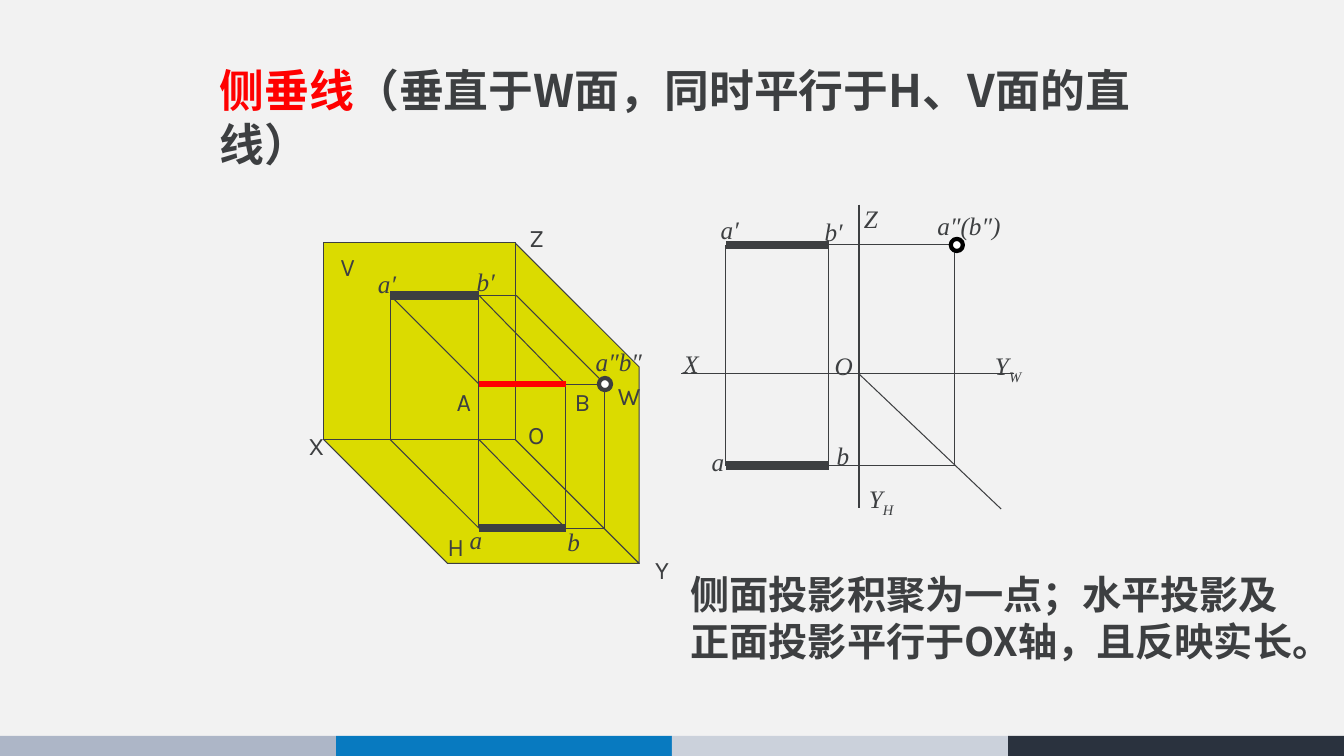
from dataclasses import dataclass
from lxml import etree
from pptx import Presentation
from pptx import util as u
from pptx.dml.color import RGBColor
from pptx.enum import shapes, text
from pptx.oxml.ns import qn


@dataclass(frozen=True)
class Theme:
    paper: str = "F2F2F2"
    ink: str = "3D3F41"
    red: str = "FF0000"
    plane: str = "DBDB00"
    white: str = "FFFFFF"
    black: str = "000000"
    sans: str = "Karla"
    chinese: str = "Noto Sans CJK SC"
    serif: str = "Times New Roman"
    title: int = 32
    body: int = 28
    label: int = 18
    thin: float = 0.75
    ring: float = 3
    true_length: float = 4.5
    projection: float = 6


THEME = Theme()
WIDTH, HEIGHT = 13.33, 7.5
FOOTER_TOP = 7.3
FOOTER = ["ADB6C7", "087AC0", "CBD1DB", "2A323E"]

TITLE = [("侧垂线", THEME.red, THEME.sans),
         ("（垂直于W面，同时平行于H、V面的直线）", THEME.ink, THEME.chinese)]
CONCLUSION = [("侧面投影积聚为一点；水平投影及正面投影平行于OX轴，且反映实长。",
               THEME.ink, THEME.chinese)]
PARAGRAPHS = [(TITLE, THEME.title, (2.08, 0.53, 9.68, 0.64)),
              (CONCLUSION, THEME.body, (6.75, 5.57, 6.32, 1.04))]

PLANE_LEFT, PLANE_TOP, PLANE_WIDTH, PLANE_HEIGHT, DEPTH = 3.21, 2.41, 1.9, 1.95, 1.23

SPACE_POINTS = {
    "a'": (3.87, 2.93), "b'": (4.75, 2.93), "z": (5.12, 2.93),
    "A": (4.75, 3.81), "B": (5.61, 3.81), "w": (6, 3.81),
    "ax": (3.87, 4.36), "bx": (4.75, 4.36),
    "a": (4.75, 5.24), "b": (5.61, 5.24), "y": (6, 5.24),
}
SPACE_LINES = ["A a", "b' z", "B w", "y a", "w y", "a' ax", "a ax", "A a'",
               "z w", "B b", "B b'", "b' bx", "b bx"]

FLAT_POINTS = {
    "a'": (7.2, 2.43), "b'": (8.22, 2.43), "a''": (9.47, 2.43),
    "a": (7.2, 4.62), "b": (8.22, 4.62), "y": (9.47, 4.62),
    "X": (6.75, 3.71), "O": (8.52, 3.71), "Yw": (10.06, 3.71),
    "Z": (8.52, 2.03), "Yh": (8.52, 5.04), "bisector": (9.93, 5.05),
}
FLAT_LINES = ["Yw X", "O bisector", "b y", "y a''", "b b'", "a a'", "b' a''", "Z Yh"]

RINGS = [(SPACE_POINTS["w"], THEME.ink), ((9.49, 2.43), THEME.black)]
RING_SIZE = 0.12

LABEL_HEIGHT = 0.4
PLANE_LABEL_WIDTH = 0.44
PLANE_LABELS = [("V", 3.28, 2.44), ("W", 6.03, 3.72), ("X", 2.96, 4.22),
                ("Y", 6.4, 5.45), ("Z", 5.15, 2.16), ("O", 5.14, 4.11),
                ("A", 4.43, 3.78), ("B", 5.6, 3.78), ("H", 4.34, 5.22)]
POINT_LABELS = [("b", "", 5.53, 5.17, 0.38), ("a′", "", 3.65, 2.61, 0.75),
                ("a″b″", "", 5.81, 3.39, 1.12), ("a", "", 4.56, 5.15, 0.25),
                ("b′", "", 4.63, 2.59, 0.75), ("Y", "W", 9.77, 3.43, 0.51),
                ("Z", "", 8.47, 1.97, 0.33), ("X", "", 6.68, 3.41, 0.35),
                ("a″(b″)", "", 9.2, 2.04, 0.87), ("b′", "", 8.08, 2.1, 0.81),
                ("a", "", 6.96, 4.38, 0.45), ("O", "", 8.18, 3.43, 0.35),
                ("Y", "H", 8.52, 4.75, 0.47), ("a′", "", 7.05, 2.08, 0.74),
                ("b", "", 8.2, 4.32, 0.43)]


def inches(values):
    return [u.Inches(value) for value in values]


def draw_shape(slide, kind, box, fill, line=None, weight=THEME.thin):
    shape = slide.shapes.add_shape(kind, *inches(box))
    shape.shadow.inherit = False
    shape.fill.solid()
    shape.fill.fore_color.rgb = RGBColor.from_string(fill)
    if line:
        shape.line.color.rgb = RGBColor.from_string(line)
        shape.line.width = u.Pt(weight)
    else:
        shape.line.fill.background()
    return shape


def draw_line(slide, points, pair, weight=THEME.thin, color=THEME.ink):
    start, end = (points[name] for name in pair.split())
    connector = slide.shapes.add_connector(
        shapes.MSO_CONNECTOR.STRAIGHT, *inches(start + end))
    connector.line.color.rgb = RGBColor.from_string(color)
    connector.line.width = u.Pt(weight)
    etree.SubElement(connector.element.spPr, qn("a:effectLst"))


def add_text(slide, box, runs, size, **formats):
    frame = slide.shapes.add_textbox(*inches(box)).text_frame
    frame.word_wrap = True
    frame.auto_size = text.MSO_AUTO_SIZE.SHAPE_TO_FIT_TEXT
    paragraph = frame.paragraphs[0]
    for words, color, face in runs:
        run = paragraph.add_run()
        run.text = words
        values = {"name": face, "size": u.Pt(size), **formats}
        for name, value in values.items():
            setattr(run.font, name, value)
        run.font.color.rgb = RGBColor.from_string(color)
        east_asian = etree.SubElement(run.font._element, qn("a:ea"))
        east_asian.set("typeface", THEME.chinese)
    return frame


def draw_planes(slide):
    kinds = shapes.MSO_SHAPE
    right, bottom = PLANE_LEFT + PLANE_WIDTH, PLANE_TOP + PLANE_HEIGHT
    side_length = PLANE_HEIGHT + DEPTH
    side_box = (right + (DEPTH - side_length) / 2,
                PLANE_TOP + (side_length - DEPTH) / 2, side_length, DEPTH)
    floor_box = (PLANE_LEFT, bottom, PLANE_WIDTH + DEPTH, DEPTH)
    front_box = (PLANE_LEFT, PLANE_TOP, PLANE_WIDTH, PLANE_HEIGHT)
    side = draw_shape(slide, kinds.PARALLELOGRAM, side_box, THEME.plane, THEME.ink)
    side.rotation = 270
    floor = draw_shape(slide, kinds.PARALLELOGRAM, floor_box, THEME.plane, THEME.ink)
    floor.element.spPr.find(qn("a:xfrm")).set("flipH", "1")
    for shape in (side, floor):
        shape.adjustments[0] = 1
    draw_shape(slide, kinds.RECTANGLE, front_box, THEME.plane, THEME.ink)


def draw_views(slide):
    for points, pairs in ((SPACE_POINTS, SPACE_LINES), (FLAT_POINTS, FLAT_LINES)):
        for pair in pairs:
            draw_line(slide, points, pair)
        for pair in ("a' b'", "a b"):
            draw_line(slide, points, pair, THEME.projection)
    draw_line(slide, SPACE_POINTS, "A B", THEME.true_length, THEME.red)
    for (x, y), color in RINGS:
        box = (x - RING_SIZE / 2, y - RING_SIZE / 2, RING_SIZE, RING_SIZE)
        draw_shape(slide, shapes.MSO_SHAPE.OVAL, box, THEME.white, color, THEME.ring)


def add_labels(slide):
    for word, left, top in PLANE_LABELS:
        add_text(slide, (left, top, PLANE_LABEL_WIDTH, LABEL_HEIGHT),
                 [(word, THEME.ink, THEME.sans)], THEME.label)
    for word, subscript, left, top, width in POINT_LABELS:
        runs = [(part, THEME.ink, THEME.serif) for part in (word, subscript) if part]
        frame = add_text(slide, (left, top, width, LABEL_HEIGHT), runs,
                         THEME.label, italic=True)
        for run in frame.paragraphs[0].runs[1:]:
            run.font._element.set("baseline", "-25000")


def main():
    presentation = Presentation()
    presentation.slide_width, presentation.slide_height = inches((WIDTH, HEIGHT))
    slide = presentation.slides.add_slide(presentation.slide_layouts[6])
    slide.background.fill.solid()
    slide.background.fill.fore_color.rgb = RGBColor.from_string(THEME.paper)
    band = WIDTH / len(FOOTER)
    for index, color in enumerate(FOOTER):
        draw_shape(slide, shapes.MSO_SHAPE.RECTANGLE,
                   (index * band, FOOTER_TOP, band, HEIGHT - FOOTER_TOP), color)
    draw_planes(slide)
    draw_views(slide)
    add_labels(slide)
    for runs, size, box in PARAGRAPHS:
        frame = add_text(slide, box, runs, size, bold=True)
        frame.margin_top = u.Inches(0.09)
        frame.paragraphs[0].line_spacing = u.Pt(size * 1.2)
    presentation.save("out.pptx")


if __name__ == "__main__":
    main()
